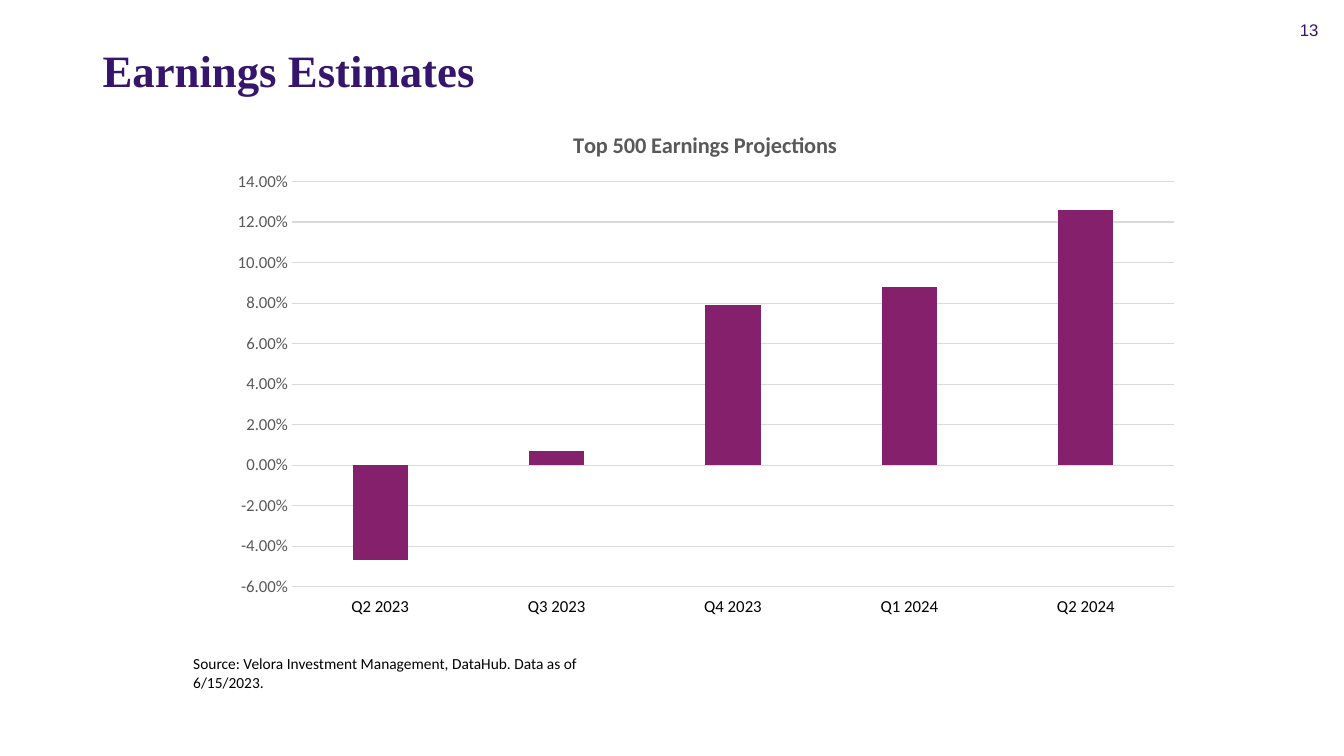
import pptx
import pptx.chart.data
import pptx.dml.color
import pptx.enum.chart
import pptx.enum.text
import pptx.oxml
import pptx.oxml.ns
import pptx.util

Cm, Pt = pptx.util.Cm, pptx.util.Pt
COLORS = {"heading": "36166D", "bar": "85216C", "grid": "D9D9D9", "gray": "595959", "black": "000000"}


def style(font, name, size, color, bold=False):
    for key, value in {"name": name, "size": Pt(size), "bold": bold}.items():
        setattr(font, key, value)
    font.color.rgb = pptx.dml.color.RGBColor.from_string(COLORS[color])


def set_layout(parent, index, **fractions):
    for old in parent.findall(pptx.oxml.ns.qn("c:layout")):
        parent.remove(old)
    values = "".join(f'<c:{key} val="{value}"/>' for key, value in fractions.items())
    parent.insert(index, pptx.oxml.parse_xml(
        f'<c:layout {pptx.oxml.ns.nsdecls("c")}><c:manualLayout>{values}</c:manualLayout></c:layout>'))


deck = pptx.Presentation()
deck.slide_width, deck.slide_height = Cm(33.87), Cm(19.05)
page = deck.slides.add_slide(deck.slide_layouts[5])

# Title
title = page.shapes.title
for key, value in {"left": 2.33, "top": 1.02, "width": 29.21, "height": 1.63}.items():
    setattr(title, key, Cm(value))
title.text_frame.text = "Earnings Estimates"
title.text_frame.vertical_anchor = pptx.enum.text.MSO_ANCHOR.MIDDLE
heading = title.text_frame.paragraphs[0]
heading.alignment = pptx.enum.text.PP_ALIGN.LEFT
heading.line_spacing = 0.9
style(heading.runs[0].font, "Times New Roman", 32, "heading", True)

# Page number and source line
for text, place, font, size, color, align, wrap in [
    ("13", (25.86, 0.38, 7.62, 1.02), "Arial", 12, "heading", "RIGHT", True),
    ("Source: Velora Investment Management, DataHub. Data as of 6/15/2023.",
     (4.62, 16.36, 11.96, 0.74), "Calibri", 11, "black", "LEFT", False),
]:
    box = page.shapes.add_textbox(*map(Cm, place))
    box.text_frame.word_wrap = wrap
    para = box.text_frame.paragraphs[0]
    para.alignment = pptx.enum.text.PP_ALIGN[align]
    span = para.add_run()
    span.text = text
    style(span.font, font, size, color)

# Earnings chart
data = pptx.chart.data.CategoryChartData(number_format="0.00%")
data.categories = ["Q2 2023", "Q3 2023", "Q4 2023", "Q1 2024", "Q2 2024"]
data.add_series("Series 1", [-0.047, 0.007, 0.079, 0.088, 0.126])
chart = page.shapes.add_chart(pptx.enum.chart.XL_CHART_TYPE.COLUMN_CLUSTERED,
                              Cm(5.49), Cm(2.64), Cm(24.59), Cm(13.16), data).chart
style(chart.font, "Calibri", 10, "black")
chart.has_legend = False
chart.has_title = True
chart.chart_title.include_in_layout = False
caption = chart.chart_title.text_frame
caption.text = "Top 500 Earnings Projections"
style(caption.paragraphs[0].runs[0].font, "Calibri", 16, "gray", True)
set_layout(chart.chart_title._element, 1, xMode="edge", yMode="edge", x=0.36, y=0.04)
set_layout(chart._chartSpace.chart.plotArea, 0, layoutTarget="inner", xMode="edge", yMode="edge",
           x=0.076, y=0.147, w=0.904, h=0.776)

# Bars
plot = chart.plots[0]
plot.gap_width, plot.overlap, plot.vary_by_categories = 219, -27, False
bars = plot.series[0]
bars.invert_if_negative = False
bars.format.fill.solid()
bars.format.fill.fore_color.rgb = pptx.dml.color.RGBColor.from_string(COLORS["bar"])

# Axes
quarters, growth = chart.category_axis, chart.value_axis
for axis, color in [(quarters, "black"), (growth, "gray")]:
    axis.major_tick_mark = axis.minor_tick_mark = pptx.enum.chart.XL_TICK_MARK.NONE
    style(axis.tick_labels.font, "Calibri", 12, color)
quarters.tick_label_position = pptx.enum.chart.XL_TICK_LABEL_POSITION.LOW
for key, value in {"minimum_scale": -0.06, "maximum_scale": 0.14, "major_unit": 0.02}.items():
    setattr(growth, key, value)
growth.tick_labels.number_format = "0.00%"
growth.tick_labels.number_format_is_linked = False
growth.format.line.fill.background()
for line in (quarters.format.line, growth.major_gridlines.format.line):
    line.width = Pt(0.75)
    line.color.rgb = pptx.dml.color.RGBColor.from_string(COLORS["grid"])

deck.save("out.pptx")
